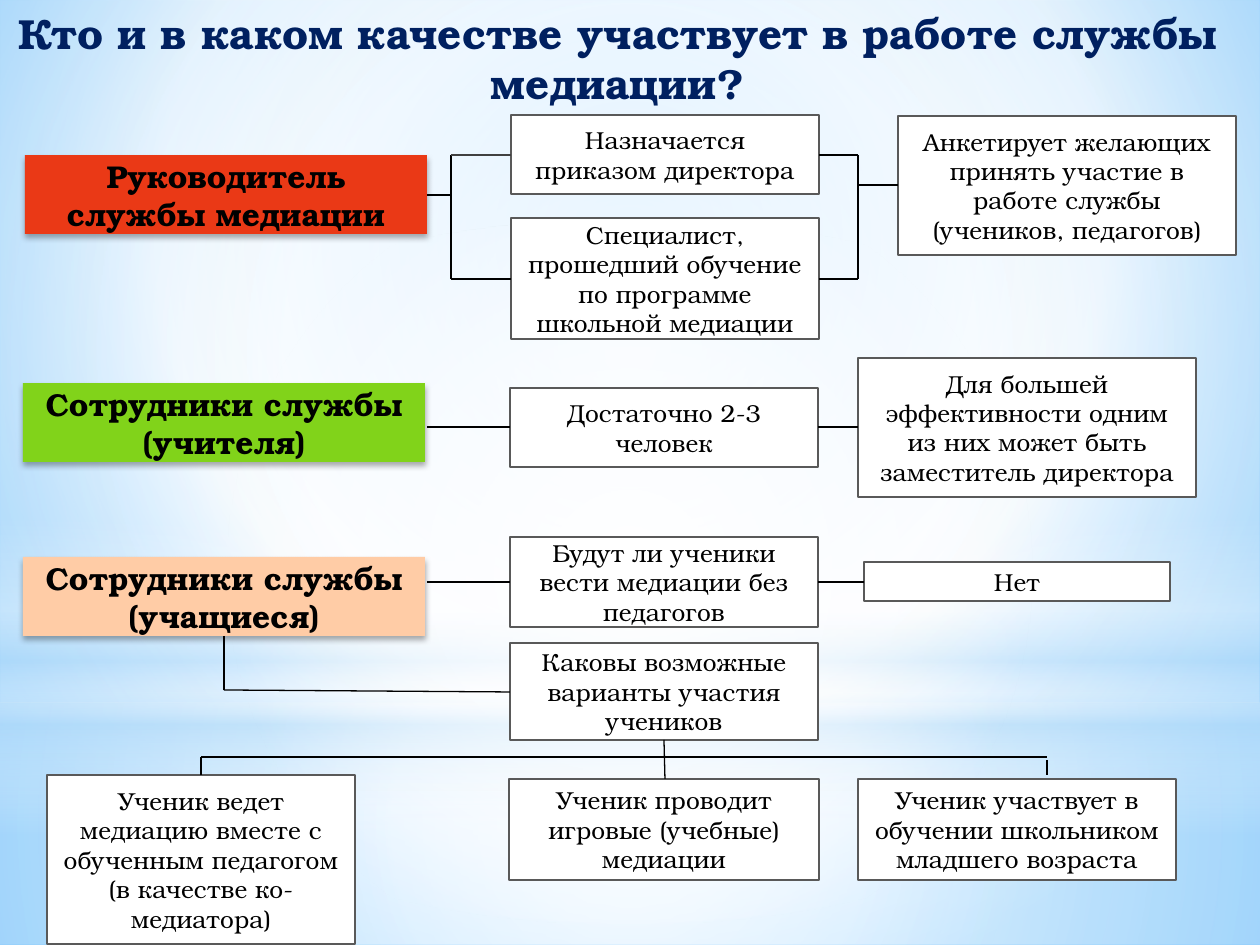
"""Build the slide on who takes part in a school mediation service."""
from lxml import etree
from pptx import Presentation
from pptx import util as u
from pptx.dml.color import RGBColor
from pptx.enum import shapes, text
from pptx.oxml import parse_xml
from pptx.oxml.ns import nsdecls, qn

PX = u.Inches(1) / 126
FONT = "TeX Gyre Bonum"
color = RGBColor.from_string
CENTRE = '<a:path path="circle"><a:fillToRect l="{}000" t="{}000" r="{}000" b="{}000"/></a:path>'
MIDDLE = CENTRE.format(50, 50, 50, 50)


def set_gradient(fill, parent, stops, direction):
    """Fill with (position, colour, opacity) stops."""
    fill.gradient()
    marks = "".join(
        f'<a:gs pos="{at * 1000}"><a:srgbClr val="{tone}"><a:alpha val="{alpha * 1000}"/></a:srgbClr></a:gs>'
        for at, tone, alpha in stops)
    old = parent.find(qn("a:gradFill"))
    parent.replace(old, parse_xml(
        f'<a:gradFill {nsdecls("a")} rotWithShape="1"><a:gsLst>{marks}</a:gsLst>{direction}</a:gradFill>'))


def write(box, words, size, tone, bold=False):
    """Put centred text in a box."""
    frame = box.text_frame
    frame.word_wrap = True
    frame.vertical_anchor = text.MSO_ANCHOR.MIDDLE
    frame.text = words
    para = frame.paragraphs[0]
    para.alignment = text.PP_ALIGN.CENTER
    font = para.runs[0].font
    font.name, font.size, font.bold = FONT, u.Pt(size), bold
    font.color.rgb = color(tone)


deck = Presentation()
deck.slide_width, deck.slide_height = u.Inches(10), u.Inches(7.5)
page = deck.slides.add_slide(deck.slide_layouts[6])
RECT, OVAL = shapes.MSO_SHAPE.RECTANGLE, shapes.MSO_SHAPE.OVAL

backdrop = page.background.fill
backdrop.gradient()
set_gradient(backdrop, page.background._cSld.bg.bgPr,
             [(0, "9ED5FF", 100), (60, "FFFFFF", 100), (100, "5BB9FF", 100)],
             CENTRE.format(20, 10, 20, 60))

glows = [
    (RECT, 703, 242, [(0, "FFFFFF", 91), (37, "FFFFFF", 76), (100, "B4DCFA", 79)], MIDDLE),
    (RECT, 0, 703, [(0, "FFFFFF", 89), (48, "FFFFFF", 62), (100, "B4DCFA", 79)], MIDDLE),
    (RECT, 519, 315, [(0, "FFFFFF", 0), (29, "FFFFFF", 30), (45, "B4DCFA", 40),
                      (55, "FFFFFF", 26), (65, "B4DCFA", 60), (100, "FFFFFF", 0)],
     '<a:lin ang="5400000" scaled="0"/>'),
    (OVAL, 220, 703, [(0, "FFFFFF", 100), (56, "FFFFFF", 0)], MIDDLE),
]
for kind, top, height, stops, direction in glows:
    glow = page.shapes.add_shape(kind, 0, round(top * PX), deck.slide_width, round(height * PX))
    glow.shadow.inherit = False
    glow.line.fill.background()
    set_gradient(glow.fill, glow._element.spPr, stops, direction)

title = page.shapes.add_textbox(*[round(n * PX) for n in (-25, 0, 1285, 116)])
write(title, "Кто и в каком качестве участвует в работе службы медиации?", 24, "002060", True)

roles = [
    (25, 155, "EA3916", "Руководитель службы медиации"),
    (23, 383, "81D31A", "Сотрудники службы (учителя)"),
    (23, 557, "FFCCA6", "Сотрудники службы (учащиеся)"),
]
for left, top, tone, words in roles:
    role = page.shapes.add_shape(RECT, *[round(n * PX) for n in (left, top, 402, 79)])
    role.fill.solid()
    role.fill.fore_color.rgb = color(tone)
    role.line.fill.background()
    role.shadow.inherit = False
    role._element.spPr.find(qn("a:effectLst")).append(parse_xml(
        f'<a:outerShdw {nsdecls("a")} blurRad="44450" dist="27940" dir="5400000" rotWithShape="0">'
        '<a:srgbClr val="000000"><a:alpha val="32000"/></a:srgbClr></a:outerShdw>'))
    write(role, words, 18, "000000", True)

details = [
    (511, 115, 308, 79, "Назначается приказом директора"),
    (511, 218, 308, 121, "Специалист, прошедший обучение по программе школьной медиации"),
    (898, 116, 338, 139, "Анкетирует желающих принять участие в работе службы (учеников, педагогов)"),
    (510, 388, 308, 79, "Достаточно 2-3 человек"),
    (858, 358, 338, 139, "Для большей эффективности одним из них может быть заместитель директора"),
    (510, 537, 308, 90, "Будут ли ученики вести медиации без педагогов"),
    (510, 643, 308, 97, "Каковы возможные варианты участия учеников"),
    (864, 562, 306, 39, "Нет"),
    (47, 775, 308, 169, "Ученик ведет медиацию вместе с обученным педагогом (в качестве ко-медиатора)"),
    (509, 779, 310, 101, "Ученик проводит игровые (учебные) медиации"),
    (858, 779, 318, 101, "Ученик участвует в обучении школьником младшего возраста"),
]
for *place, words in details:
    detail = page.shapes.add_shape(RECT, *[round(n * PX) for n in place])
    detail.shadow.inherit = False
    detail.fill.solid()
    detail.fill.fore_color.rgb = color("FFFFFF")
    detail.line.color.rgb = color("595959")
    detail.line.width = u.Pt(1.25)
    write(detail, words, 14, "000000")

routes = [
    [(427, 195), (451, 195), (451, 155), (511, 155)],
    [(451, 195), (451, 279), (511, 279)],
    [(819, 155), (858, 155), (858, 279), (819, 279)],
    [(858, 185), (898, 185)],
    [(427, 427), (510, 427)],
    [(818, 427), (858, 427)],
    [(427, 582), (510, 582)],
    [(818, 582), (864, 582)],
    [(224, 636), (224, 690), (510, 692)],
    [(664, 740), (665, 779)],
    [(664, 757), (201, 757), (201, 775)],
    [(665, 757), (1047, 757)],
    [(1047, 760), (1047, 775)],
]
for route in routes:
    for start, end in zip(route, route[1:]):
        link = page.shapes.add_connector(
            shapes.MSO_CONNECTOR.STRAIGHT, *[round(n * PX) for n in start + end])
        link.line.color.rgb = color("404040" if end == (511, 155) else "000000")
        link.line.width = u.Pt(0.75)
        etree.SubElement(link._element.spPr, qn("a:effectLst"))

deck.save("out.pptx")
